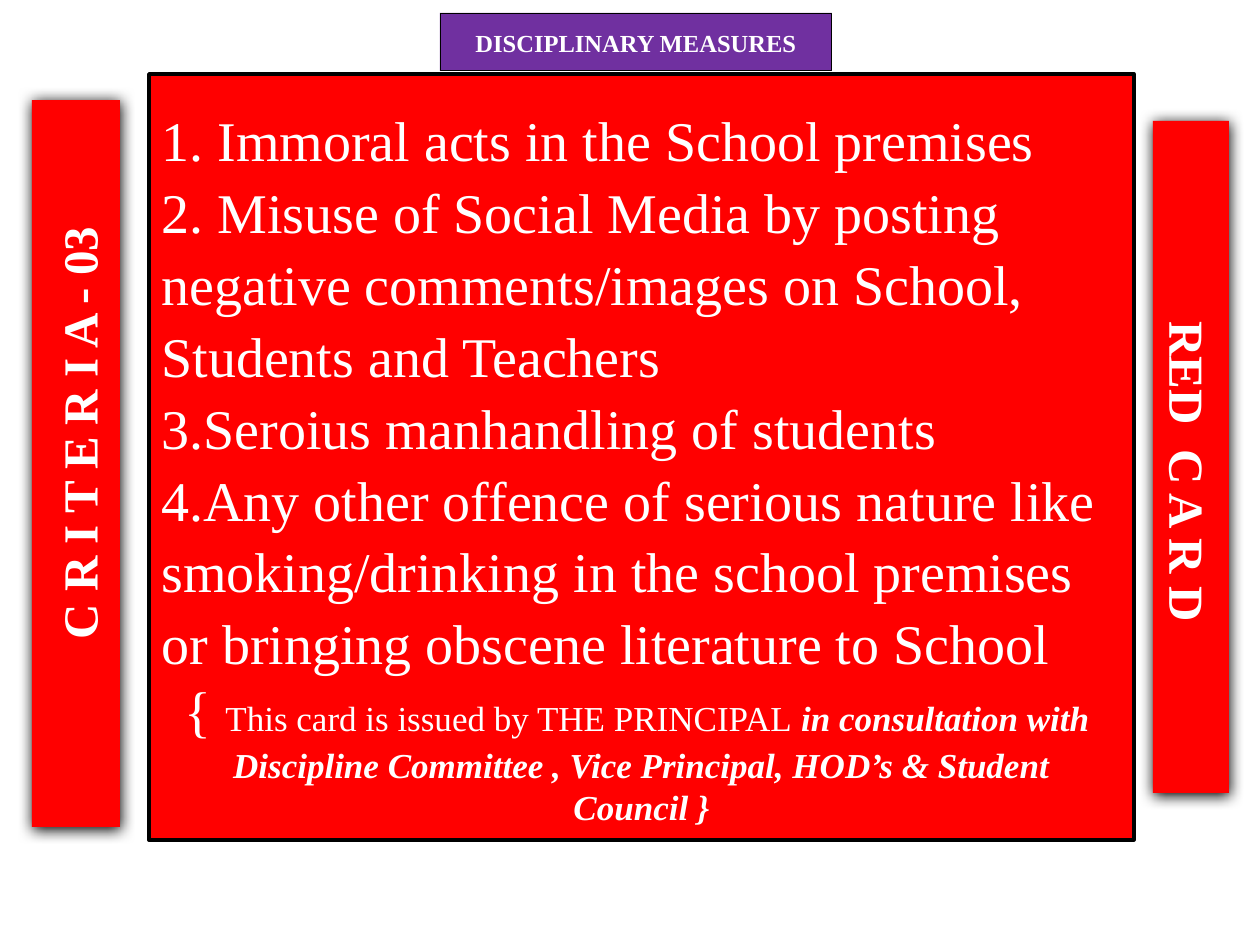
from lxml.etree import SubElement
from pptx import Presentation
from pptx.dml.color import RGBColor
from pptx.enum.shapes import MSO_SHAPE as Shape
from pptx.enum.text import MSO_ANCHOR as Anchor, PP_ALIGN as Align
from pptx.oxml.ns import qn
from pptx.util import Emu, Pt

SCALE = 914400 / 126
WHITE, BLACK, RED, PURPLE = "FFFFFF", "000000", "FF0000", "7030A0"


def px(length):
    return Emu(round(length * SCALE))


def add_text(para, text, size, **formats):
    span = para.add_run()
    span.text = text
    span.font.color.rgb = RGBColor.from_string(WHITE)
    for name, value in {"name": "Times New Roman", "size": Pt(size), **formats}.items():
        setattr(span.font, name, value)


deck = Presentation()
deck.slide_width, deck.slide_height = px(1260), px(945)
page = deck.slides.add_slide(deck.slide_layouts[6])

# name: place, fill, line width in points, anchor, text direction
panels = {
    "offences": ((149, 74, 985, 766), RED, 2, Anchor.TOP, "horz"),
    "criteria": ((32, 100, 88, 727), RED, 0, Anchor.MIDDLE, "vert270"),
    "card": ((1153, 121, 76, 672), RED, 0, Anchor.MIDDLE, "vert"),
    "title": ((440, 13, 392, 58), PURPLE, 0.5, Anchor.MIDDLE, "horz"),
}
frames = {}
for name, (place, fill, line_width, anchor, direction) in panels.items():
    box = page.shapes.add_shape(Shape.RECTANGLE, *map(px, place))
    box.shadow.inherit = False
    box.fill.solid()
    box.fill.fore_color.rgb = RGBColor.from_string(fill)
    if line_width:
        box.line.color.rgb = RGBColor.from_string(BLACK)
        box.line.width = Pt(line_width)
    else:
        box.line.fill.background()
        effects = box._element.spPr.find(qn("a:effectLst"))
        shadow = SubElement(effects, qn("a:outerShdw"), blurRad=str(Pt(8.5)),
                            dist=str(Pt(1)), dir="5400000", rotWithShape="0")
        SubElement(shadow, qn("a:srgbClr"), val=BLACK)
    frame = box.text_frame
    frame.word_wrap = True
    frame.vertical_anchor = anchor
    frame._txBody.bodyPr.set("vert", direction)
    frames[name] = frame

# Short labels: text, size, indent that moves the centred text
labels = {
    "criteria": ("C R I T E R I A - 03", 28, 61),
    "card": ("RED  C A R D", 28, 29),
    "title": ("DISCIPLINARY MEASURES", 14, 0),
}
for name, (text, size, indent) in labels.items():
    para = frames[name].paragraphs[0]
    para.alignment = Align.CENTER
    para.line_spacing = 1.07
    if indent:
        para.space_after = Pt(8)
        para._p.get_or_add_pPr().set("marL", str(px(indent)))
    add_text(para, text, size, bold=True)

offences = [
    "1. Immoral acts in the School premises",
    "2. Misuse of Social Media by posting negative comments/images on School, "
    "Students and Teachers",
    "3.Seroius manhandling of students",
    "4.Any other offence of serious nature like smoking/drinking in the school "
    "premises or bringing obscene literature to School",
]
frame = frames["offences"]
frame.margin_top = px(27)
for index, text in enumerate(offences):
    para = frame.add_paragraph() if index else frame.paragraphs[0]
    para.alignment = Align.LEFT
    para.line_spacing = 1.07
    add_text(para, text, 32)

strong = {"bold": True, "italic": True}
issuer_notes = [
    [("{ ", 32, {}), ("This card is issued by THE PRINCIPAL", 20, {}),
     (" in consultation with ", 20, strong)],
    [("Discipline Committee , Vice Principal, HOD’s & Student Council }", 20, strong)],
]
for spans in issuer_notes:
    para = frame.add_paragraph()
    para.alignment = Align.CENTER
    for text, size, formats in spans:
        add_text(para, text, size, **formats)

deck.save("out.pptx")
